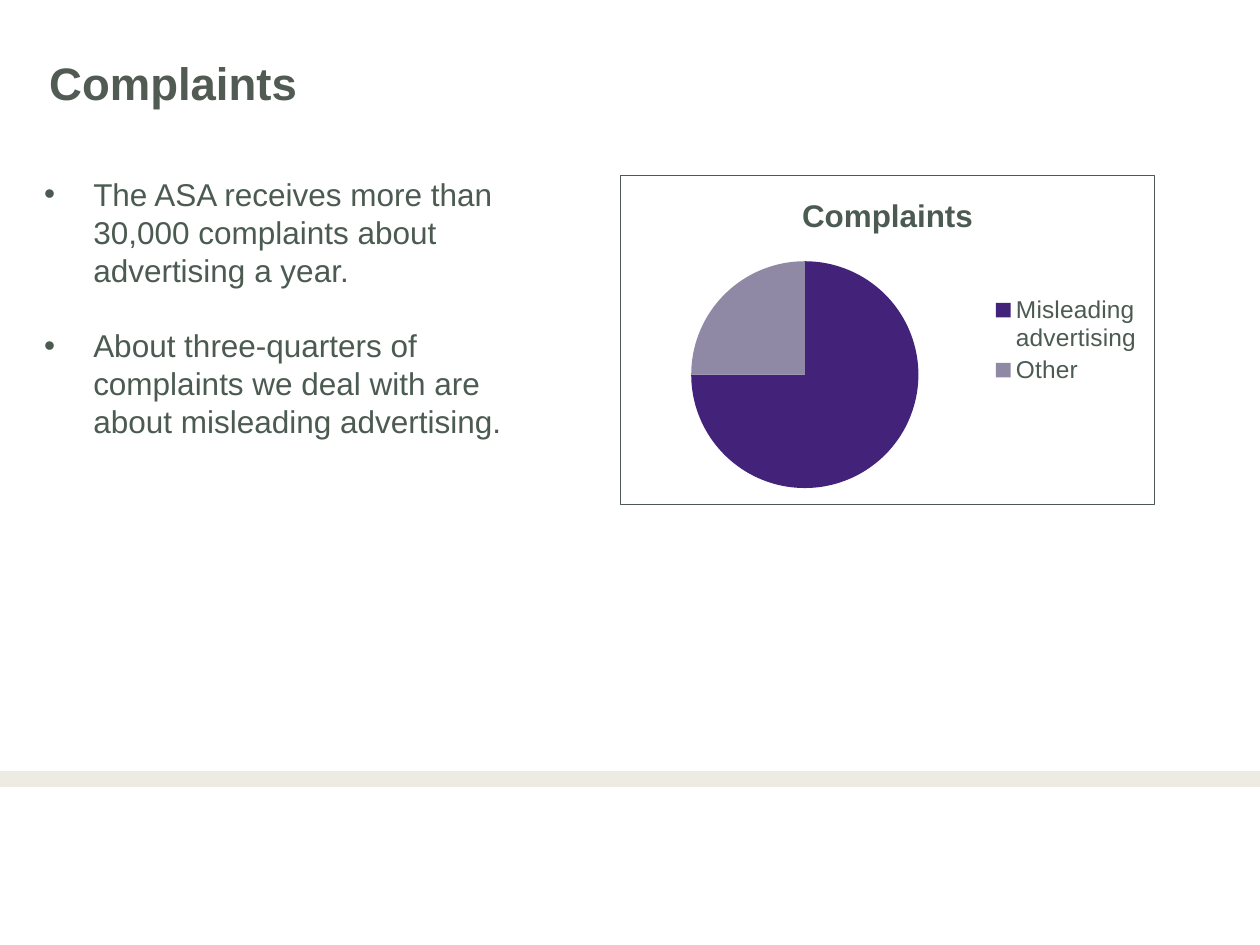
from lxml.etree import SubElement
from pptx import Presentation
from pptx.chart.data import CategoryChartData
from pptx.dml.color import RGBColor
from pptx.enum.chart import XL_CHART_TYPE, XL_LEGEND_POSITION
from pptx.enum.shapes import MSO_CONNECTOR
from pptx.enum.text import MSO_ANCHOR, PP_ALIGN
from pptx.oxml import parse_xml
from pptx.oxml.ns import nsdecls, qn
from pptx.util import Inches, Pt

FONT = "Arial"
HUES = {
    "title": "515B53",
    "text": "4C5B52",
    "rule": "EDEBE2",
    "most": "422379",
    "rest": "8F89A5",
}
POINTS = [
    "The ASA receives more than 30,000 complaints about advertising a year.",
    "About three-quarters of complaints we deal with are about misleading advertising.",
]


def hue(name):
    return RGBColor.from_string(HUES[name])


def style(font, size, name, bold=False):
    font.name, font.size, font.bold = FONT, Pt(size), bold
    font.color.rgb = hue(name)


def clear(frame):
    frame.word_wrap = True
    frame.vertical_anchor = MSO_ANCHOR.TOP
    frame.margin_left = frame.margin_right = 0
    frame.margin_top = frame.margin_bottom = 0


def add_rule(slide, y):
    rule = slide.shapes.add_connector(
        MSO_CONNECTOR.STRAIGHT, 0, Inches(y), Inches(10), Inches(y))
    rule.line.color.rgb = hue("rule")
    rule.line.width = Pt(9)
    SubElement(rule._element.spPr, qn("a:effectLst"))


def set_title(slide, text):
    title = slide.shapes.title
    title.left, title.top = Inches(0.39), Inches(0.39)
    title.width, title.height = Inches(9), Inches(0.59)
    clear(title.text_frame)
    para = title.text_frame.paragraphs[0]
    para.alignment = PP_ALIGN.LEFT
    para.line_spacing = 1.1
    run = para.add_run()
    run.text = text
    style(run.font, 26, "title", True)


def add_list(slide, items):
    box = slide.shapes.add_textbox(
        Inches(0.35), Inches(1.39), Inches(4.02), Inches(2.37))
    frame = box.text_frame
    clear(frame)
    for i, item in enumerate(items):
        para = frame.add_paragraph() if i else frame.paragraphs[0]
        para.line_spacing = Pt(21.6)
        if i:
            para.space_before = Pt(21.6)
        # Hanging bullet
        props = para._p.get_or_add_pPr()
        indent = Inches(0.39)
        props.set("marL", str(indent))
        props.set("indent", str(-indent))
        SubElement(props, qn("a:buFont")).set("typeface", FONT)
        SubElement(props, qn("a:buChar")).set("char", "•")
        run = para.add_run()
        run.text = item
        style(run.font, 18, "text")


def add_pie(slide):
    data = CategoryChartData()
    data.categories = ["Misleading advertising", "Other "]
    data.add_series("Complaints", [75, 25])
    chart = slide.shapes.add_chart(
        XL_CHART_TYPE.PIE, Inches(4.92), Inches(1.39),
        Inches(4.25), Inches(2.62), data).chart
    style(chart.font, 18, "text")

    # Heading and legend
    chart.has_title = True
    run = chart.chart_title.text_frame.paragraphs[0].add_run()
    run.text = "Complaints"
    style(run.font, 18, "text", True)
    chart.chart_title.include_in_layout = False
    chart.has_legend = True
    chart.legend.position = XL_LEGEND_POSITION.RIGHT
    chart.legend.include_in_layout = False
    style(chart.legend.font, 14, "text")

    # Slices
    plot = chart.plots[0]
    plot.vary_by_categories = True
    for i, name in enumerate(("most", "rest")):
        fill = plot.series[0].points[i].format.fill
        fill.solid()
        fill.fore_color.rgb = hue(name)

    # Place of the pie within the frame
    area = chart._chartSpace.chart.plotArea
    for old in area.findall(qn("c:layout")):
        area.remove(old)
    sizes = {"x": 0.13, "y": 0.26, "w": 0.43, "h": 0.69}
    parts = '<c:layoutTarget val="inner"/>'
    parts += "".join(f'<c:{k}Mode val="edge"/>' for k in "xy")
    parts += "".join(f'<c:{k} val="{v}"/>' for k, v in sizes.items())
    area.insert(0, parse_xml(
        f'<c:layout {nsdecls("c")}><c:manualLayout>{parts}'
        "</c:manualLayout></c:layout>"))

    # Frame line
    chart._chartSpace.chart.addnext(parse_xml(
        f'<c:spPr {nsdecls("c", "a")}><a:noFill/><a:ln w="{Pt(0.75)}">'
        f'<a:solidFill><a:srgbClr val="{HUES["text"]}"/></a:solidFill>'
        "</a:ln></c:spPr>"))


def main():
    deck = Presentation()
    deck.slide_width, deck.slide_height = Inches(10), Inches(7.5)
    slide = deck.slides.add_slide(deck.slide_layouts[5])
    add_rule(slide, 6.18)
    set_title(slide, "Complaints")
    add_list(slide, POINTS)
    add_pie(slide)
    deck.save("out.pptx")


if __name__ == "__main__":
    main()
